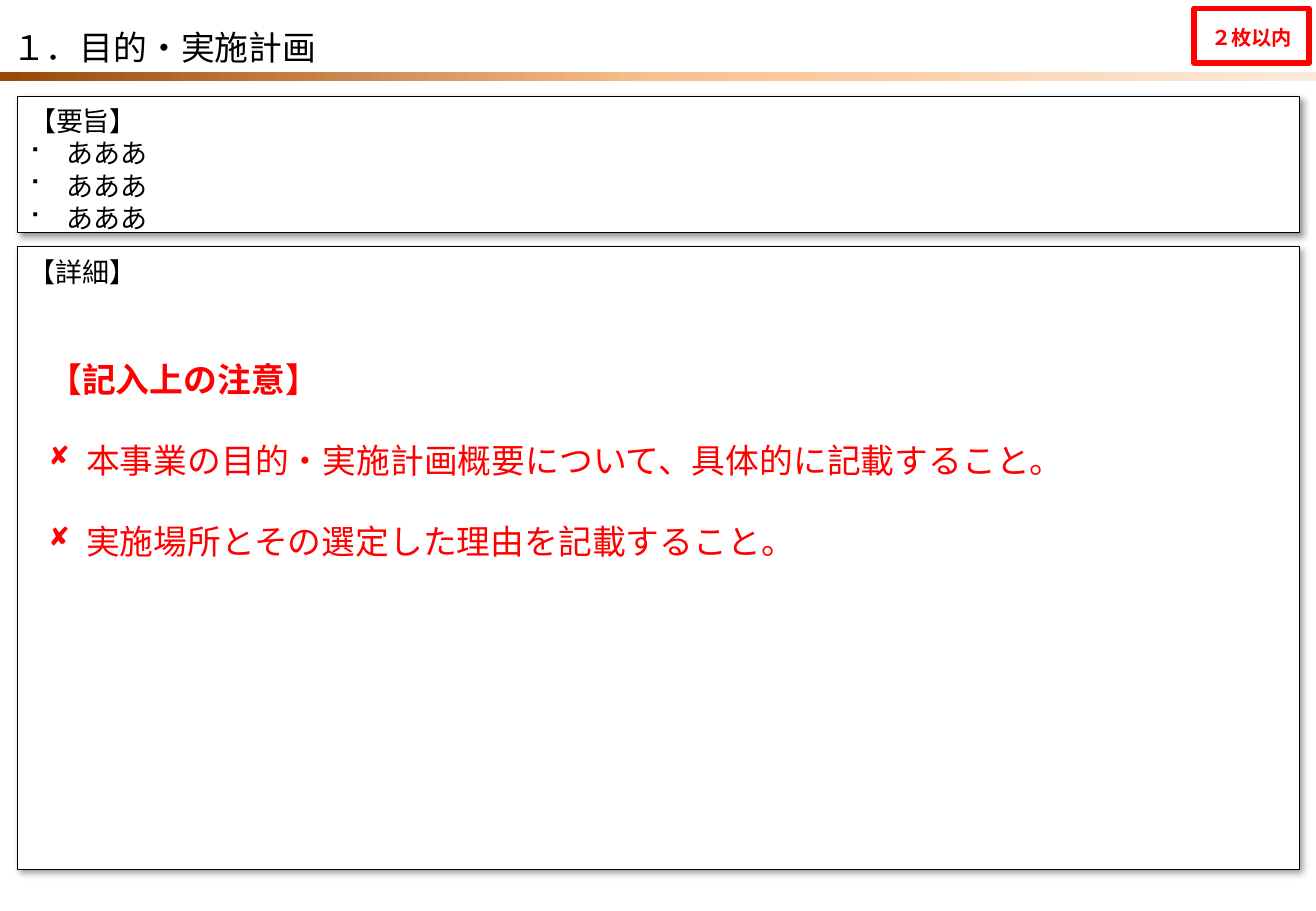
import pptx
import pptx.dml.color
import pptx.enum.shapes
import pptx.enum.text
import pptx.oxml
import pptx.oxml.ns
import pptx.util

WIDTH, HEIGHT = 10.83, 7.5
FONT = "Noto Sans CJK JP"
BLACK, WHITE, RED = "000000", "FFFFFF", "FF0000"
LINE_RATIO = 1.2
HANGING = 0.31
MARGIN = 0.14
PANEL_WIDTH = WIDTH - 2 * MARGIN
INSETS = {"margin_left": 0.1, "margin_right": 0.1, "margin_top": 0.07, "margin_bottom": 0.05}
ANCHOR = pptx.enum.text.MSO_ANCHOR
ALIGN = pptx.enum.text.PP_ALIGN


def rgb(value):
    return pptx.dml.color.RGBColor.from_string(value)


def add_xml(parent, markup):
    namespace = pptx.oxml.ns.nsdecls("a")
    element = pptx.oxml.parse_xml(markup.replace(" ", f" {namespace} ", 1))
    parent.append(element)


def place(shape, box):
    for name, length in zip(("left", "top", "width", "height"), box):
        setattr(shape, name, pptx.util.Inches(length))


def add_rectangle(page, box):
    kind = pptx.enum.shapes.MSO_SHAPE.RECTANGLE
    shape = page.shapes.add_shape(kind, *map(pptx.util.Inches, box))
    shape.shadow.inherit = False
    return shape


def paint(shape, line=None, weight=0.25):
    shape.fill.solid()
    shape.fill.fore_color.rgb = rgb(WHITE)
    if line:
        shape.line.color.rgb = rgb(line)
        shape.line.width = pptx.util.Pt(weight)
    else:
        shape.line.fill.background()


def drop_shadow(shape):
    shape.shadow.inherit = False
    effects = shape.element.spPr.find(pptx.oxml.ns.qn("a:effectLst"))
    add_xml(effects, '<a:outerShdw blurRad="50800" dist="38100" dir="2700000" algn="tl" rotWithShape="0">'
                     '<a:srgbClr val="000000"><a:alpha val="40000"/></a:srgbClr></a:outerShdw>')


def set_bullet(para, bullet):
    properties = para._p.get_or_add_pPr()
    indent = pptx.util.Inches(HANGING) if bullet else 0
    properties.set("marL", str(indent))
    properties.set("indent", str(-indent))
    if bullet:
        add_xml(properties, '<a:buFont typeface="Wingdings"/>')
        add_xml(properties, f'<a:buChar char="{bullet}"/>')
    else:
        add_xml(properties, "<a:buNone />")


def write(shape, lines, size, color=BLACK, align=ALIGN.LEFT, anchor=ANCHOR.TOP, gap=0):
    """Fill a shape with (text, bullet, bold) lines, gap points apart."""
    frame = shape.text_frame
    frame.word_wrap = True
    frame.auto_size = pptx.enum.text.MSO_AUTO_SIZE.NONE
    frame.vertical_anchor = anchor
    for name, length in INSETS.items():
        setattr(frame, name, pptx.util.Inches(length))
    for number, (text, bullet, bold) in enumerate(lines):
        para = frame.add_paragraph() if number else frame.paragraphs[0]
        layout = {
            "alignment": align,
            "line_spacing": pptx.util.Pt(size * LINE_RATIO),
            "space_before": pptx.util.Pt(gap if number else 0),
            "space_after": pptx.util.Pt(0),
        }
        for name, value in layout.items():
            setattr(para, name, value)
        set_bullet(para, bullet)
        span = para.add_run()
        span.text = text
        span.font.color.rgb = rgb(color)
        for name, value in {"size": pptx.util.Pt(size), "bold": bold, "name": FONT}.items():
            setattr(span.font, name, value)
        add_xml(span._r.get_or_add_rPr(), f'<a:ea typeface="{FONT}"/>')


def add_heading(page, box, text):
    """Title with the gradient rule along its lower edge."""
    left, top, width, height = box
    title = page.shapes.title
    place(title, box)
    paint(title)
    write(title, [(text, None, False)], 20, anchor=ANCHOR.MIDDLE)

    rule = add_rectangle(page, (left, top + height - 0.01, width, 0.08))
    rule.line.fill.background()
    rule.fill.gradient()
    rule.fill.gradient_angle = 0
    stops = rule.element.spPr.find(".//" + pptx.oxml.ns.qn("a:gsLst"))
    for stop in list(stops):
        stops.remove(stop)
    for percent, color in ((0, "984807"), (50, "FAC090"), (100, "FDEADA")):
        add_xml(stops, f'<a:gs pos="{percent * 1000}"><a:srgbClr val="{color}"/></a:gs>')


def add_badge(page, box, text):
    badge = add_rectangle(page, box)
    paint(badge, RED, 3.5)
    write(badge, [(text, None, True)], 12, RED, ALIGN.CENTER, ANCHOR.MIDDLE)


def add_summary(page, box, heading, points):
    panel = page.placeholders[1]
    place(panel, box)
    paint(panel, BLACK)
    drop_shadow(panel)
    write(panel, [(heading, None, False)] + [(point, "■", False) for point in points], 16)


def add_details(page, box, heading, notes_heading, notes):
    """Detail panel with the writing notes inside it."""
    left, top, width, height = box
    panel = add_rectangle(page, box)
    paint(panel, BLACK)
    drop_shadow(panel)
    write(panel, [(heading, None, False)], 16)

    notes_box = (left + 0.16, top + 0.85, width - 0.55, height - 1.92)
    frame = page.shapes.add_textbox(*map(pptx.util.Inches, notes_box))
    lines = [(notes_heading, None, True)] + [(note, "◻", False) for note in notes]
    write(frame, lines, 20, RED, gap=20 * LINE_RATIO)


def main():
    deck = pptx.Presentation()
    deck.slide_width = pptx.util.Inches(WIDTH)
    deck.slide_height = pptx.util.Inches(HEIGHT)
    page = deck.slides.add_slide(deck.slide_layouts[1])
    add_heading(page, (0, 0.16, WIDTH, 0.44), "１．目的・実施計画")
    add_badge(page, (9.83, 0.07, 0.94, 0.45), "２枚以内")
    add_summary(page, (MARGIN, 0.79, PANEL_WIDTH, 1.12), "【要旨】", ["あああ"] * 3)
    add_details(page, (MARGIN, 2.03, PANEL_WIDTH, 5.13), "【詳細】", "【記入上の注意】", [
        "本事業の目的・実施計画概要について、具体的に記載すること。",
        "実施場所とその選定した理由を記載すること。",
    ])
    deck.save("out.pptx")


if __name__ == "__main__":
    main()
